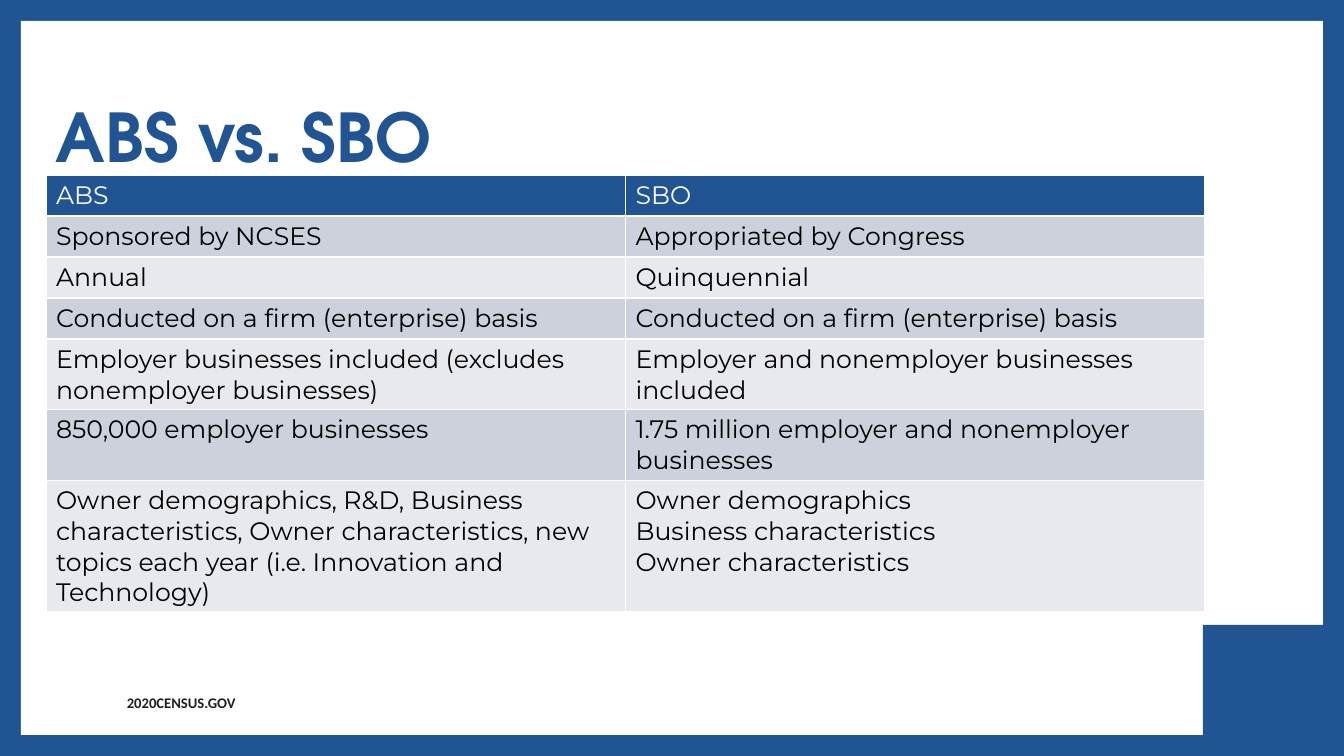
from dataclasses import dataclass

from lxml import etree
from pptx import Presentation
from pptx import util as u
from pptx.dml import color
from pptx.enum import shapes, text
from pptx.oxml import ns


@dataclass(frozen=True)
class Theme:
    blue: str = "205493"
    title_blue: str = "215493"
    white: str = "FFFFFF"
    black: str = "000000"
    footer_ink: str = "231F20"
    bands: tuple = ("CDD1DC", "E8E9EE")
    title_font: str = "TeX Gyre Adventor"
    body_font: str = "Montserrat"
    footer_font: str = "Calibri"
    title_size: float = 48
    body_size: float = 18
    footer_size: float = 10.5


def px(length):
    return u.Emu(round(length * 914400 / 100.8))


def rgb(value):
    return color.RGBColor.from_string(value)


class SlideBuilder:
    """Draws styled elements on one slide, with lengths in px."""

    def __init__(self, theme, width, height):
        self.theme = theme
        self.deck = Presentation()
        self.deck.slide_width, self.deck.slide_height = px(width), px(height)
        self.slide = self.deck.slides.add_slide(self.deck.slide_layouts[6])

    def background(self, fill):
        self.slide.background.fill.solid()
        self.slide.background.fill.fore_color.rgb = rgb(fill)

    def panel(self, at, fill):
        panel = self.slide.shapes.add_shape(shapes.MSO_SHAPE.RECTANGLE, *map(px, at))
        panel.shadow.inherit = False
        panel.fill.solid()
        panel.fill.fore_color.rgb = rgb(fill)
        panel.line.fill.background()

    def style(self, paragraph, face, size, ink, bold=False):
        font = paragraph.font
        font.name, font.size, font.bold = face, u.Pt(size), bold
        font.color.rgb = rgb(ink)

    def label(self, at, words, face, size, ink, wrap=True,
              anchor=text.MSO_ANCHOR.TOP, spacing=1.0):
        frame = self.slide.shapes.add_textbox(*map(px, at)).text_frame
        frame.word_wrap = wrap
        frame.vertical_anchor = anchor
        frame.text = words
        frame.paragraphs[0].line_spacing = spacing
        self.style(frame.paragraphs[0], face, size, ink, bold=True)

    def borders(self, cell):
        properties = cell._tc.get_or_add_tcPr()
        for side in ("lnL", "lnR", "lnT", "lnB"):
            edge = etree.SubElement(properties, ns.qn(f"a:{side}"), w=str(u.Pt(1)))
            fill = etree.SubElement(edge, ns.qn("a:solidFill"))
            etree.SubElement(fill, ns.qn("a:srgbClr"), val=self.theme.white)

    def table(self, at, row_height, rows):
        theme = self.theme
        left, top, width = at
        grid = self.slide.shapes.add_table(
            len(rows), len(rows[0]),
            *map(px, (left, top, width, row_height * len(rows)))).table
        for row in grid.rows:
            row.height = px(row_height)
        for r, row in enumerate(rows):
            fill = theme.bands[(r - 1) % 2] if r else theme.blue
            ink = theme.black if r else theme.white
            for c, words in enumerate(row):
                cell = grid.cell(r, c)
                self.borders(cell)
                cell.fill.solid()
                cell.fill.fore_color.rgb = rgb(fill)
                cell.text = words
                for paragraph in cell.text_frame.paragraphs:
                    self.style(paragraph, theme.body_font, theme.body_size, ink)


SURVEYS = [
    ("ABS", "SBO"),
    ("Sponsored by NCSES", "Appropriated by Congress"),
    ("Annual", "Quinquennial"),
    ("Conducted on a firm (enterprise) basis",
     "Conducted on a firm (enterprise) basis"),
    ("Employer businesses included (excludes nonemployer businesses)",
     "Employer and nonemployer businesses included"),
    ("850,000 employer businesses",
     "1.75 million employer and nonemployer businesses"),
    ("Owner demographics, R&D, Business characteristics, Owner characteristics, "
     "new topics each year (i.e. Innovation and Technology)",
     "Owner demographics\nBusiness characteristics\nOwner characteristics"),
]


def main():
    theme = Theme()
    builder = SlideBuilder(theme, 1344, 756)
    builder.background(theme.blue)
    builder.panel((21, 21, 1302, 714), theme.white)
    builder.label((117, 689, 132, 28), "2020CENSUS.GOV", theme.footer_font,
                  theme.footer_size, theme.footer_ink, wrap=False)
    builder.panel((1203, 625, 141, 131), theme.blue)
    builder.label((46, 36, 1180, 146), "ABS vs. SBO", theme.title_font,
                  theme.title_size, theme.title_blue,
                  anchor=text.MSO_ANCHOR.BOTTOM, spacing=0.9)
    builder.table((46, 175, 1159), 41, SURVEYS)
    builder.deck.save("out.pptx")


if __name__ == "__main__":
    main()
